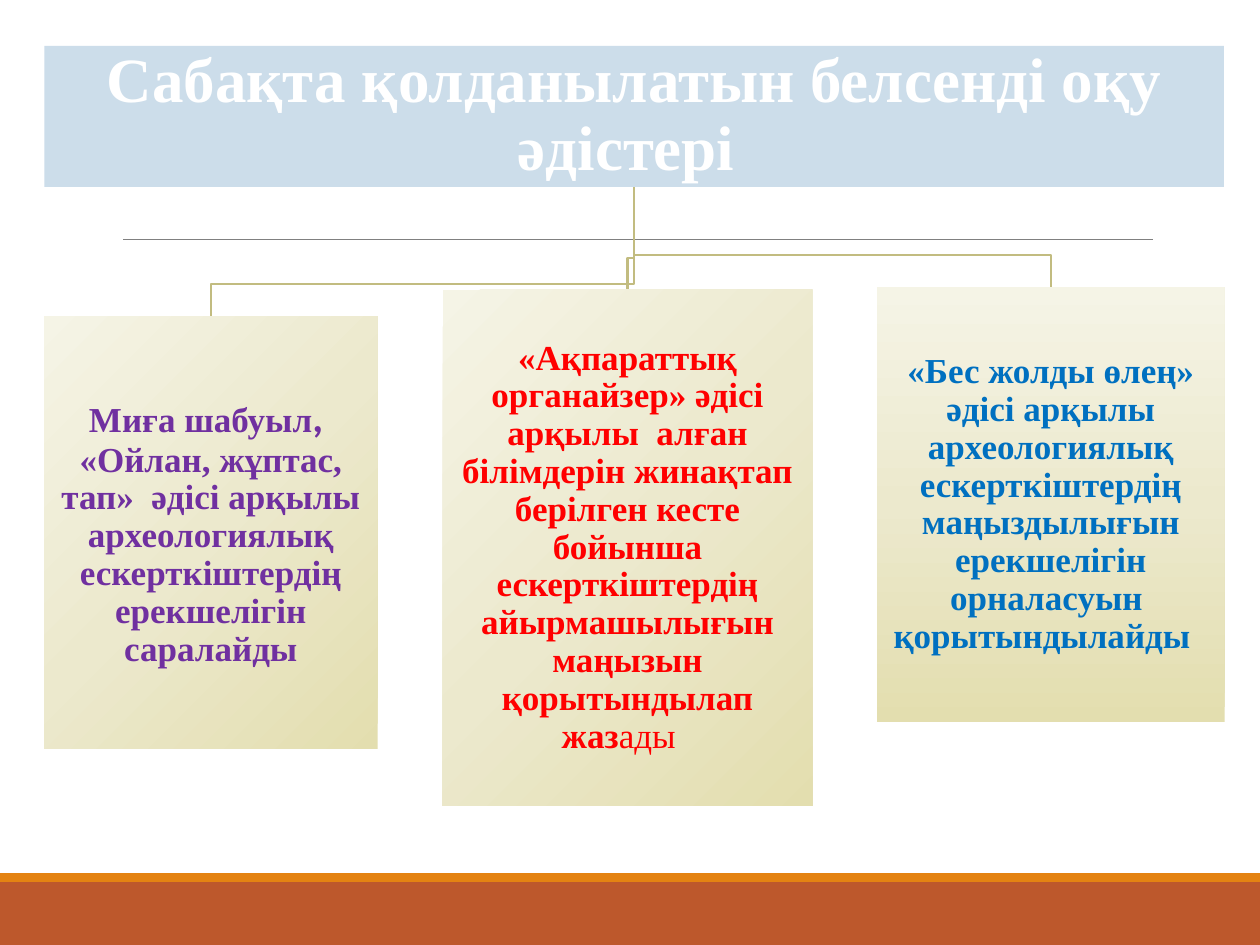
from dataclasses import dataclass

from pptx import Presentation
from pptx.dml.color import RGBColor
from pptx.enum.shapes import MSO_CONNECTOR, MSO_SHAPE
from pptx.enum.text import MSO_ANCHOR, PP_ALIGN
from pptx.oxml import parse_xml
from pptx.oxml.ns import nsdecls, qn
from pptx.util import Pt

RECTANGLE = MSO_SHAPE.RECTANGLE
STRAIGHT = MSO_CONNECTOR.STRAIGHT
MIDDLE = MSO_ANCHOR.MIDDLE
CENTER = PP_ALIGN.CENTER


@dataclass(frozen=True)
class Theme:
    footer: str = "BD582C"
    stripe: str = "E48312"
    rule: str = "808080"
    branch: str = "C2BC80"
    title_fill: str = "CCDDEA"
    title_text: str = "FFFFFF"
    gradient: tuple[str, ...] = ("E3DEAF", "ECE9CD", "F5F4E6")
    purple: str = "7030A0"
    red: str = "FF0000"
    blue: str = "0070C0"
    font: str = "Times New Roman"
    comma_font: str = "Calibri"
    title_size: float = 36
    body_size: float = 20
    comma_size: float = 24


THEME = Theme()


@dataclass(frozen=True)
class Box:
    left: float
    top: float
    width: float
    height: float

    @property
    def center(self) -> float:
        return self.left + self.width / 2


@dataclass(frozen=True)
class Span:
    text: str
    size: float = THEME.body_size
    font: str = THEME.font
    bold: bool = True


@dataclass(frozen=True)
class Method:
    box: Box
    color: str
    shading: str
    spans: tuple[Span, ...]


SLIDE_WIDTH, SLIDE_HEIGHT = 720, 540
ELBOW_RISE = 18.4
TITLE_BOX = Box(25.4, 26.2, 674, 80.6)
TITLE = Span("Сабақта қолданылатын белсенді оқу әдістері ", THEME.title_size)

# Gradient directions, each darkest at the bottom or bottom right
DIAGONAL = '<a:lin ang="13500000" scaled="0"/>'
UPWARD = '<a:lin ang="16200000" scaled="0"/>'
CORNER = '<a:path path="circle"><a:fillToRect l="100000" t="100000"/></a:path>'

METHODS = (
    Method(Box(25.2, 180.7, 190.6, 247.2), THEME.purple, DIAGONAL, (
        Span("Миға шабуыл"),
        Span(",  ", THEME.comma_size, THEME.comma_font),
        Span("«Ойлан, жұптас, тап»  әдісі арқылы археологиялық "
             "ескерткіштердің ерекшелігін саралайды"),
    )),
    Method(Box(252.9, 165.7, 211.4, 294.7), THEME.red, CORNER, (
        Span("«Ақпараттық органайзер» әдісі арқылы  алған білімдерін жинақтап "
             "берілген кесте бойынша ескерткіштердің айырмашылығын маңызын "
             "қорытындылап жаз"),
        Span("ады  ", bold=False),
    )),
    Method(Box(501.2, 164.2, 198.6, 248.3), THEME.blue, UPWARD, (
        Span("«Бес жолды өлең» әдісі арқылы археологиялық ескерткіштердің "
             "маңыздылығын ерекшелігін орналасуын  қорытындылайды  "),
    )),
)


def draw_box(slide, box: Box, fill: str | None = None):
    shape = slide.shapes.add_shape(
        RECTANGLE, Pt(box.left), Pt(box.top), Pt(box.width), Pt(box.height))
    shape.shadow.inherit = False
    shape.line.fill.background()
    if fill:
        shape.fill.solid()
        shape.fill.fore_color.rgb = RGBColor.from_string(fill)
    return shape


def shade(shape, direction: str) -> None:
    stops = "".join(
        f'<a:gs pos="{i * 50000}"><a:srgbClr val="{color}"/></a:gs>'
        for i, color in enumerate(THEME.gradient))
    gradient = parse_xml(
        f'<a:gradFill {nsdecls("a")} rotWithShape="1">'
        f'<a:gsLst>{stops}</a:gsLst>{direction}</a:gradFill>')
    shape._element.spPr.find(qn("a:prstGeom")).addnext(gradient)


def write(shape, spans: tuple[Span, ...], color: str, inset: float) -> None:
    frame = shape.text_frame
    frame.word_wrap = True
    frame.vertical_anchor = MIDDLE
    frame.margin_left = frame.margin_right = Pt(inset)
    frame.margin_top = frame.margin_bottom = Pt(inset)
    paragraph = frame.paragraphs[0]
    paragraph.alignment = CENTER
    paragraph.line_spacing = 0.9
    for span in spans:
        run = paragraph.add_run()
        run.text = span.text
        run.font.size = Pt(span.size)
        run.font.name = span.font
        run.font.bold = span.bold
        run.font.color.rgb = RGBColor.from_string(color)


def draw_rule(slide, left: float, right: float, y: float) -> None:
    rule = slide.shapes.add_connector(STRAIGHT, Pt(left), Pt(y), Pt(right), Pt(y))
    rule.line.color.rgb = RGBColor.from_string(THEME.rule)
    rule.line.width = Pt(0.5)
    rule._element.spPr.append(parse_xml(f'<a:effectLst {nsdecls("a")}/>'))


def draw_branch(slide, parent: Box, child: Box) -> None:
    elbow = child.top - ELBOW_RISE
    builder = slide.shapes.build_freeform(
        Pt(parent.center), Pt(parent.top + parent.height))
    builder.add_line_segments(
        [(Pt(parent.center), Pt(elbow)),
         (Pt(child.center), Pt(elbow)),
         (Pt(child.center), Pt(child.top))], close=False)
    branch = builder.convert_to_shape()
    branch.shadow.inherit = False
    branch.fill.background()
    branch.line.color.rgb = RGBColor.from_string(THEME.branch)
    branch.line.width = Pt(1.25)


def main() -> None:
    presentation = Presentation()
    presentation.slide_width = Pt(SLIDE_WIDTH)
    presentation.slide_height = Pt(SLIDE_HEIGHT)
    slide = presentation.slides.add_slide(presentation.slide_layouts[6])

    # Footer band and rule
    draw_box(slide, Box(0, 504, SLIDE_WIDTH, 36), THEME.footer)
    draw_box(slide, Box(0, 499, SLIDE_WIDTH, 5), THEME.stripe)
    draw_rule(slide, 70.4, 659, 136.8)

    # Branches from the title to each method
    for method in reversed(METHODS):
        draw_branch(slide, TITLE_BOX, method.box)

    # Title
    heading = draw_box(slide, TITLE_BOX, THEME.title_fill)
    write(heading, (TITLE,), THEME.title_text, 2)

    # Methods
    for method in METHODS:
        card = draw_box(slide, method.box)
        shade(card, method.shading)
        write(card, method.spans, method.color, 1)

    presentation.save("out.pptx")


if __name__ == "__main__":
    main()
